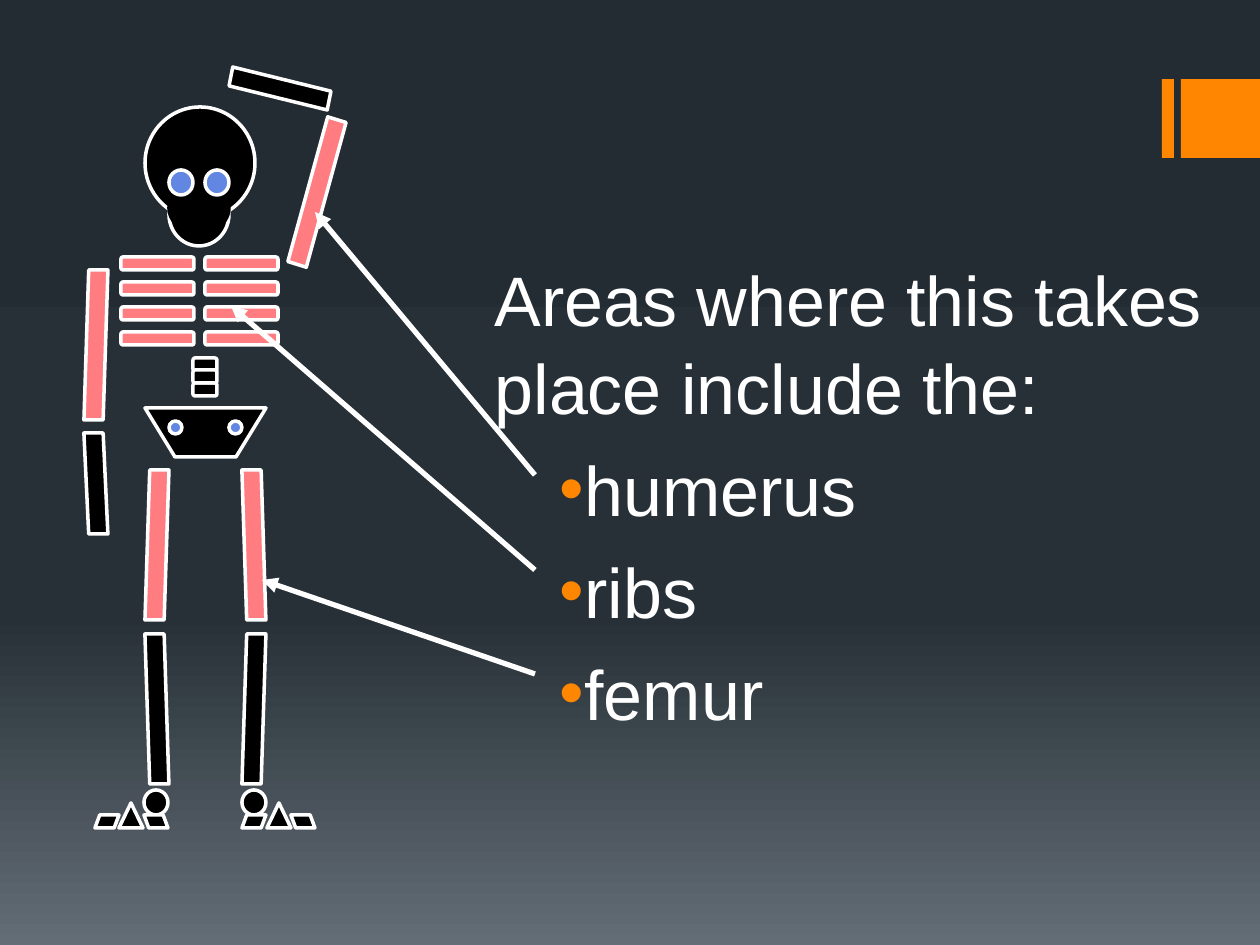
from dataclasses import dataclass

import pptx
import pptx.dml.color
import pptx.enum.shapes
import pptx.enum.text
import pptx.oxml.ns
import pptx.util
import copy
from lxml import etree

EMU_PER_PX = 914400 / 126
SHAPE = pptx.enum.shapes.MSO_SHAPE
WHITE, BLACK, ORANGE, PINK, BLUE = "FFFFFF", "000000", "FF8600", "FF7C80", "6187E3"
BONE_WIDTH = 24


@dataclass
class Part:
    kind: int
    left: int
    top: int
    width: int
    height: int
    fill: str = BLACK
    line: str | None = WHITE
    rotation: float = 0
    flipped: bool = False


@dataclass
class Arrow:
    start: tuple[int, int]
    end: tuple[int, int]


def px(value: float) -> int:
    return pptx.util.Emu(round(value * EMU_PER_PX))


def rgb(value: str) -> pptx.dml.color.RGBColor:
    return pptx.dml.color.RGBColor.from_string(value)


def add_element(parent, tag: str, **attributes: str):
    return etree.SubElement(parent, pptx.oxml.ns.qn(tag), **attributes)


def paint(shape, fill: str, line: str | None) -> None:
    shape.shadow.inherit = False
    shape.fill.solid()
    shape.fill.fore_color.rgb = rgb(fill)
    if line is None:
        shape.line.fill.background()
    else:
        shape.line.color.rgb = rgb(line)
        shape.line.width = pptx.util.Pt(2)


def draw_part(shapes, part: Part) -> None:
    shape = shapes.add_shape(
        part.kind, px(part.left), px(part.top), px(part.width), px(part.height))
    paint(shape, part.fill, part.line)
    shape.rotation = part.rotation
    if part.flipped:
        shape._element.spPr.xfrm.set("flipH", "1")


def draw_arrow(shapes, arrow: Arrow) -> None:
    connector = shapes.add_connector(
        pptx.enum.shapes.MSO_CONNECTOR.STRAIGHT,
        *(px(value) for value in arrow.start + arrow.end))
    connector.line.color.rgb = rgb(WHITE)
    connector.line.width = pptx.util.Pt(3)
    add_element(connector.line._get_or_add_ln(), "a:tailEnd", type="triangle")
    add_element(connector._element.spPr, "a:effectLst")


def write_text(paragraph, text: str, *, margin: int, indent: int = 0, level: int = 0,
               bullet: str | None = None, space_before: int = 0) -> None:
    paragraph.level = level
    properties = paragraph._p.get_or_add_pPr()
    properties.set("marL", str(px(margin)))
    properties.set("indent", str(px(indent)))
    if bullet:
        color = add_element(properties, "a:buClr")
        add_element(color, "a:srgbClr", val=ORANGE)
        add_element(properties, "a:buChar", char=bullet)
    else:
        add_element(properties, "a:buNone")
    paragraph.line_spacing = 1.05
    paragraph.space_before = pptx.util.Pt(space_before)
    run = paragraph.add_run()
    run.text = text
    run.font.name = "Arial"
    run.font.size = pptx.util.Pt(40)
    run.font.color.rgb = rgb(WHITE)


def set_background(slide, stops: list[tuple[float, str]]) -> None:
    fill = slide.background.fill
    fill.gradient()
    fill.gradient_angle = 270
    stop_list = slide._element.find(".//" + pptx.oxml.ns.qn("a:gsLst"))
    while len(stop_list) < len(stops):
        stop_list.append(copy.deepcopy(stop_list[0]))
    for stop, (position, color) in zip(fill.gradient_stops, stops):
        stop.position = position
        stop.color.rgb = rgb(color)


def rib_parts() -> list[Part]:
    return [Part(SHAPE.FLOWCHART_ALTERNATE_PROCESS, left, 257 + 25 * row, 73, 13, PINK)
            for row in range(4) for left in (121, 205)]


def vertebra(top: int) -> Part:
    return Part(SHAPE.FLOWCHART_ALTERNATE_PROCESS, 193, top, BONE_WIDTH, 13)


def bone(left: int, top: int, height: int, fill: str = BLACK,
         rotation: float = 0, flipped: bool = False) -> Part:
    return Part(SHAPE.FLOWCHART_DATA, left, top, BONE_WIDTH, height, fill,
                rotation=rotation, flipped=flipped)


def foot_parts(left: int, direction: int) -> list[Part]:
    """Direction is -1 for toes to the left and 1 for toes to the right."""
    return [
        Part(SHAPE.OVAL, left, 790, BONE_WIDTH, 25),
        Part(SHAPE.ISOSCELES_TRIANGLE, left + 25 * direction, 803, BONE_WIDTH, 25),
        bone(left + 49 * direction, 815, 13, flipped=direction > 0),
        bone(left, 815, 13, flipped=direction < 0),
    ]


def draw_skeleton(shapes) -> None:
    # Skull, ribs and spine
    upper_body = [
        vertebra(358), vertebra(383),
        Part(SHAPE.OVAL, 169, 183, 60, 63),
        Part(SHAPE.OVAL, 145, 107, 110, 112),
        Part(SHAPE.OVAL, 169, 183, 60, 50, line=BLACK),
        *rib_parts(),
        vertebra(370),
    ]
    for part in upper_body:
        draw_part(shapes, part)

    # Pelvis
    builder = shapes.build_freeform(145, 408, scale=EMU_PER_PX)
    builder.add_line_segments([(175, 457), (236, 457), (266, 408)], close=True)
    paint(builder.convert_to_shape(), BLACK, WHITE)

    # Hip joints, eyes, arms, legs and feet
    others = [
        *(Part(SHAPE.OVAL, left, 421, 13, 13, BLUE) for left in (169, 229)),
        *(Part(SHAPE.OVAL, left, 170, 24, 25, BLUE) for left in (169, 205)),
        bone(84, 270, 150, PINK),
        bone(305, 117, 150, PINK, rotation=197.2, flipped=True),
        bone(84, 433, 101, flipped=True),
        bone(268, 38, 101, rotation=281.1),
        bone(145, 470, 150, PINK),
        bone(242, 634, 150),
        bone(242, 470, 150, PINK, flipped=True),
        bone(145, 634, 150, flipped=True),
        *foot_parts(144, -1),
        *foot_parts(242, 1),
    ]
    for part in others:
        draw_part(shapes, part)


def main() -> None:
    presentation = pptx.Presentation()
    presentation.slide_width, presentation.slide_height = px(1260), px(945)
    slide = presentation.slides.add_slide(presentation.slide_layouts[1])
    title = slide.shapes.title._element
    title.getparent().remove(title)
    set_background(slide, [(0, "242C33"), (0.65, "273037"), (1, "636D76")])

    # Body text
    body = slide.placeholders[1]
    body.left, body.top, body.width, body.height = px(420), px(243), px(840), px(472)
    frame = body.text_frame
    frame.word_wrap = True
    frame.auto_size = pptx.enum.text.MSO_AUTO_SIZE.NONE
    frame.vertical_anchor = pptx.enum.text.MSO_ANCHOR.TOP
    frame.margin_top = px(9)
    write_text(frame.paragraphs[0], "Areas where this takes place include the:", margin=62)
    for area in ("humerus", "ribs", "femur"):
        write_text(frame.add_paragraph(), area, margin=152, indent=-25, level=1,
                   bullet="•", space_before=8)

    # Corner bars
    for left, width in ((1162, 12), (1181, 79)):
        draw_part(slide.shapes, Part(SHAPE.RECTANGLE, left, 79, width, 79, ORANGE, None))

    draw_skeleton(slide.shapes.add_group_shape().shapes)

    # Arrows from the list to the bones
    for arrow in (Arrow((535, 475), (315, 212)),
                  Arrow((535, 570), (231, 306)),
                  Arrow((535, 674), (262, 580))):
        draw_arrow(slide.shapes, arrow)

    presentation.save("out.pptx")


if __name__ == "__main__":
    main()
